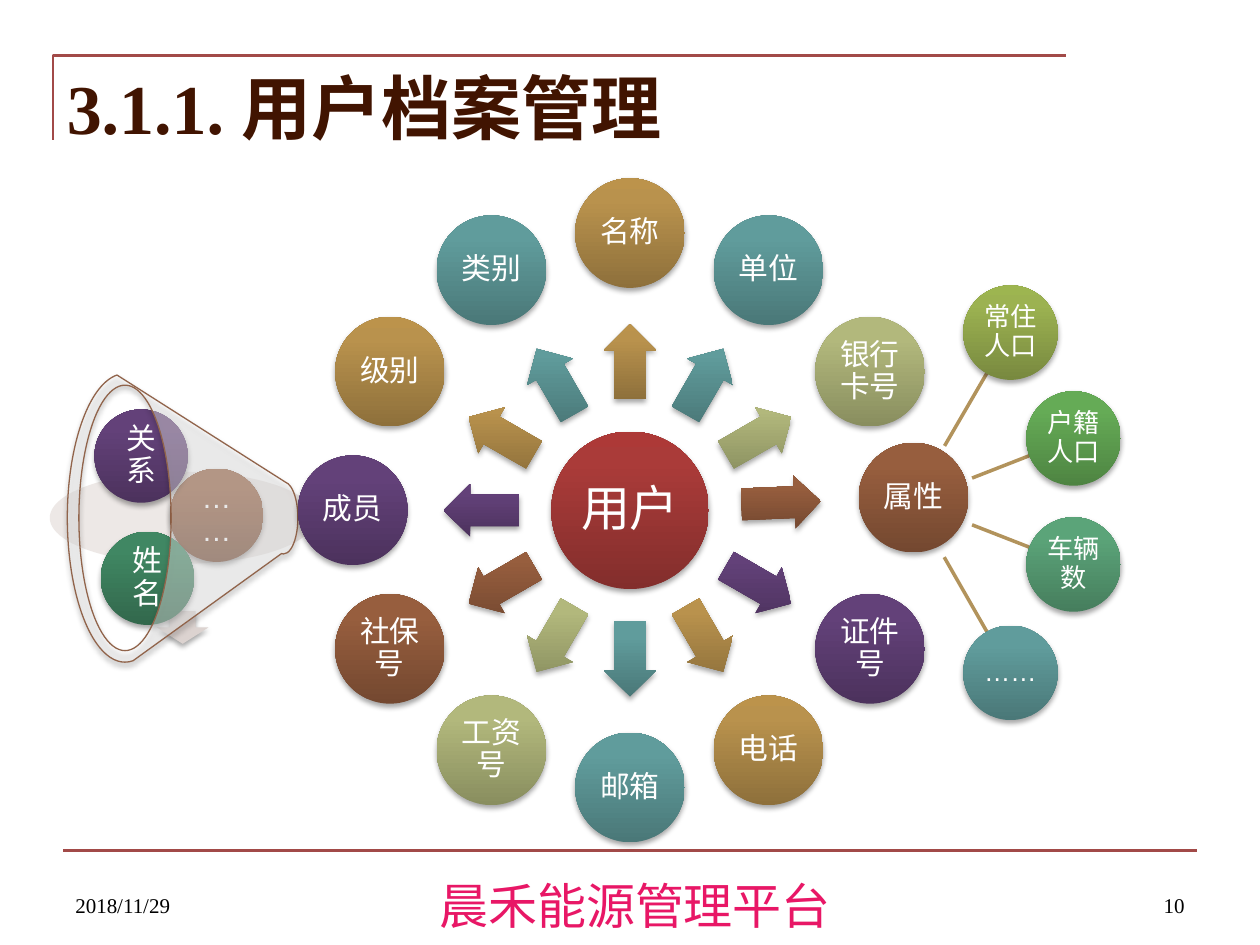
from copy import deepcopy
from math import atan2, cos, degrees, hypot, radians, sin

from lxml import etree
from pptx import Presentation
from pptx.dml.color import RGBColor
from pptx.enum.shapes import MSO_CONNECTOR, MSO_SHAPE
from pptx.enum.text import MSO_ANCHOR, MSO_AUTO_SIZE, PP_ALIGN
from pptx.oxml.ns import qn
from pptx.util import Inches, Pt

CIRCLE, ARROW = MSO_SHAPE.OVAL, MSO_SHAPE.RIGHT_ARROW
FUNNEL, DOWN_ARROW = MSO_SHAPE.FUNNEL, MSO_SHAPE.DOWN_ARROW
LEFT, CENTER, RIGHT = PP_ALIGN.LEFT, PP_ALIGN.CENTER, PP_ALIGN.RIGHT
TOP, MIDDLE, BOTTOM = MSO_ANCHOR.TOP, MSO_ANCHOR.MIDDLE, MSO_ANCHOR.BOTTOM

SERIF, SANS, CJK = "Times New Roman", "Arial", "Noto Sans CJK SC"


def shades(*codes):
    return [RGBColor.from_string(code) for code in codes]


WHITE, BLACK = RGBColor(255, 255, 255), RGBColor(0, 0, 0)
RULE_RED = RGBColor(0xA2, 0x4A, 0x48)
TITLE_BROWN = RGBColor(0x41, 0x14, 0x01)
FOOTER_PINK = RGBColor(0xE8, 0x17, 0x66)
SPOKE_TAN = RGBColor(0xB2, 0x93, 0x5C)
FUNNEL_EDGE = RGBColor(0x91, 0x64, 0x4B)
FUNNEL_RIM = RGBColor(0xD2, 0xC6, 0xC1)
FUNNEL_ARROW = RGBColor(0xDC, 0xD3, 0xD0)
# Gradients from bottom to top
RED = shades("832E2C", "AA3B39", "AD3937")
GOLD = shades("8E703B", "B9924D", "BC934B")
TEAL = shades("4A7878", "609C9C", "5F9E9E")
OLIVE = shades("898E5F", "B2B87C", "B4BA7B")
BROWN = shades("744830", "975E3E", "995E3D")
PURPLE = shades("4C325D", "634179", "64417A")
LIME = shades("78893F", "9CB251", "9DB550")
GREEN = shades("4E8442", "65AB56", "65AD55")
MINT = shades("467E5D", "5BA479", "5AA679")
FOREST = shades("32684C", "408763", "3F8963")

RING_CENTER, RING_RADIUS, ARROW_RADIUS = (5, 4.05), 2.2, 1.18
FIELD_SIZE, FIELD_STEP = 0.87, 30
ATTRIBUTE = "属性"
ATTRIBUTE_CENTER, ATTRIBUTE_ARROW = (7.25, 3.95), (6.2, 3.99)
FIELDS = [
    ("名称", GOLD), ("单位", TEAL), ("银行卡号", OLIVE), (ATTRIBUTE, BROWN),
    ("证件号", PURPLE), ("电话", GOLD), ("邮箱", TEAL), ("工资号", OLIVE),
    ("社保号", BROWN), ("成员", PURPLE), ("级别", GOLD), ("类别", TEAL),
]
SPOKE_HUB, SPOKE_START, DETAIL_SIZE = (7.24, 3.98), 0.51, 0.75
DETAILS = [
    ("常住人口", LIME, 8.02, 2.64), ("户籍人口", GREEN, 8.52, 3.48),
    ("车辆数", MINT, 8.52, 4.48), ("……", TEAL, 8.02, 5.34),
]
MEMBER_SIZE = 0.74
MEMBERS = [
    ("……", BROWN, 1.72, 4.09), ("姓名", FOREST, 1.17, 4.59),
    ("关系", PURPLE, 1.12, 3.62),
]


def write(shape, text, size, color, font=SANS, bold=False, align=CENTER,
          anchor=MIDDLE, inset=None, spacing=None, wrap=True):
    frame = shape.text_frame
    frame.auto_size = MSO_AUTO_SIZE.NONE
    frame.word_wrap = wrap
    frame.vertical_anchor = anchor
    if inset is not None:
        frame.margin_left = frame.margin_right = Inches(inset)
        frame.margin_top = frame.margin_bottom = Inches(inset)
    paragraph = frame.paragraphs[0]
    paragraph.alignment = align
    if spacing:
        paragraph.line_spacing = spacing
    run = paragraph.add_run()
    run.text = text
    run.font.size, run.font.bold, run.font.name = Pt(size), bold, font
    run.font.color.rgb = color
    etree.SubElement(run.font._element, qn("a:ea")).set("typeface", CJK)


def add_text(slide, box, text, size, color, **fmt):
    write(slide.shapes.add_textbox(*map(Inches, box)), text, size, color, **fmt)


def set_alpha(shape, percent):
    color = shape.fill._xPr.find(qn("a:solidFill"))[0]
    etree.SubElement(color, qn("a:alpha")).set("val", str(percent * 1000))


def fill_gradient(shape, colors):
    shape.fill.gradient()
    shape.fill.gradient_angle = 90
    gradient = shape._element.spPr.find(qn("a:gradFill"))
    gradient.set("rotWithShape", "0")
    stop_list = gradient.find(qn("a:gsLst"))
    stop_list.append(deepcopy(stop_list[0]))
    for stop, color, position in zip(shape.fill.gradient_stops, colors, (0, 0.8, 1)):
        stop.color.rgb, stop.position = color, position


def cast_shadow(shape):
    effects = shape._element.spPr.find(qn("a:effectLst"))
    shadow = etree.SubElement(effects, qn("a:outerShdw"), blurRad=str(Pt(3.1)),
                              dist=str(Pt(1.8)), dir="5400000", rotWithShape="0")
    color = etree.SubElement(shadow, qn("a:srgbClr"), val="000000")
    etree.SubElement(color, qn("a:alpha"), val="35000")


def add_figure(slide, preset, center, width, height, fill, rotation=0, shadow=True):
    """Add a preset shape around its center; a list as fill gives a gradient."""
    x, y = center
    figure = slide.shapes.add_shape(preset, Inches(x - width / 2), Inches(y - height / 2),
                                    Inches(width), Inches(height))
    figure.rotation = rotation
    if isinstance(fill, list):
        fill_gradient(figure, fill)
    else:
        figure.fill.solid()
        figure.fill.fore_color.rgb = fill
    figure.line.fill.background()
    figure.shadow.inherit = False
    if shadow:
        cast_shadow(figure)
    return figure


def add_bubble(slide, text, center, size, colors, text_size=17, inset=0.02):
    bubble = add_figure(slide, CIRCLE, center, size, size, colors)
    write(bubble, text, text_size, WHITE, inset=inset, spacing=0.9)


def add_line(slide, start, end, color, width):
    line = slide.shapes.add_connector(MSO_CONNECTOR.STRAIGHT, *map(Inches, (*start, *end)))
    line.line.color.rgb, line.line.width = color, Pt(width)
    etree.SubElement(line._element.spPr, qn("a:effectLst"))


def on_circle(center, radius, angle):
    return (center[0] + radius * cos(radians(angle)),
            center[1] + radius * sin(radians(angle)))


def add_frame(slide):
    builder = slide.shapes.build_freeform(Inches(0.42), Inches(1.11))
    builder.add_line_segments([(Inches(0.42), Inches(0.44)), (Inches(8.46), Inches(0.44))],
                              close=False)
    corner = builder.convert_to_shape()
    corner.fill.background()
    corner.line.color.rgb, corner.line.width = RULE_RED, Pt(1.5)
    corner.shadow.inherit = False
    add_line(slide, (0.5, 6.75), (9.5, 6.75), RULE_RED, 1.5)

    title = slide.shapes.title
    title.left, title.top, title.width, title.height = map(Inches, (0.43, 0.46, 9.08, 0.77))
    write(title, "3.1.1. 用户档案管理", 40, TITLE_BROWN, font=SERIF, bold=True, align=LEFT)
    add_text(slide, (3.5, 6.9, 3.08, 0.39), "晨禾能源管理平台", 28, FOOTER_PINK,
             font=CJK, anchor=TOP, wrap=False)
    for left, text, align in ((0.5, "2018/11/29", LEFT), (7.17, "10", RIGHT)):
        add_text(slide, (left, 6.83, 2.33, 0.5), text, 12, BLACK,
                 font=SERIF, align=align, anchor=BOTTOM)


def add_member_funnel(slide):
    rim = add_figure(slide, CIRCLE, (1.45, 4.11), 2.11, 0.73, FUNNEL_RIM, shadow=False)
    set_alpha(rim, 40)
    add_figure(slide, DOWN_ARROW, (1.45, 4.98), 0.41, 0.26, FUNNEL_ARROW)
    for text, colors, x, y in MEMBERS:
        add_bubble(slide, text, (x, y), MEMBER_SIZE, colors, inset=0.03)
    funnel = add_figure(slide, FUNNEL, (1.45, 4.11), 2.29, 1.83, WHITE, rotation=270)
    set_alpha(funnel, 40)
    funnel.line.color.rgb, funnel.line.width = FUNNEL_EDGE, Pt(0.75)


def add_attribute_details(slide):
    for text, colors, x, y in DETAILS:
        dx, dy = x - SPOKE_HUB[0], y - SPOKE_HUB[1]
        angle = degrees(atan2(dy, dx))
        reach = hypot(dx, dy) - DETAIL_SIZE / 2
        add_line(slide, on_circle(SPOKE_HUB, SPOKE_START, angle),
                 on_circle(SPOKE_HUB, reach, angle), SPOKE_TAN, 2)
        add_bubble(slide, text, (x, y), DETAIL_SIZE, colors, text_size=15, inset=0.01)


def add_user_ring(slide):
    add_bubble(slide, "用户", RING_CENTER, 1.25, RED, text_size=28, inset=0.04)
    for index, (text, colors) in enumerate(FIELDS):
        angle = index * FIELD_STEP - 90
        place = on_circle(RING_CENTER, RING_RADIUS, angle)
        arrow_place, length = on_circle(RING_CENTER, ARROW_RADIUS, angle), 0.6
        if text == ATTRIBUTE:
            place, arrow_place = ATTRIBUTE_CENTER, ATTRIBUTE_ARROW
            angle, length = -2.4, 0.63
        arrow = add_figure(slide, ARROW, arrow_place, length, 0.42, colors,
                           rotation=angle % 360)
        arrow.adjustments[0], arrow.adjustments[1] = 0.6, 0.5
        add_bubble(slide, text, place, FIELD_SIZE, colors)


def main():
    deck = Presentation()
    deck.slide_width, deck.slide_height = Inches(10), Inches(7.5)
    slide = deck.slides.add_slide(deck.slide_layouts[5])
    add_frame(slide)
    add_member_funnel(slide)
    add_attribute_details(slide)
    add_user_ring(slide)
    deck.save("out.pptx")


if __name__ == "__main__":
    main()
